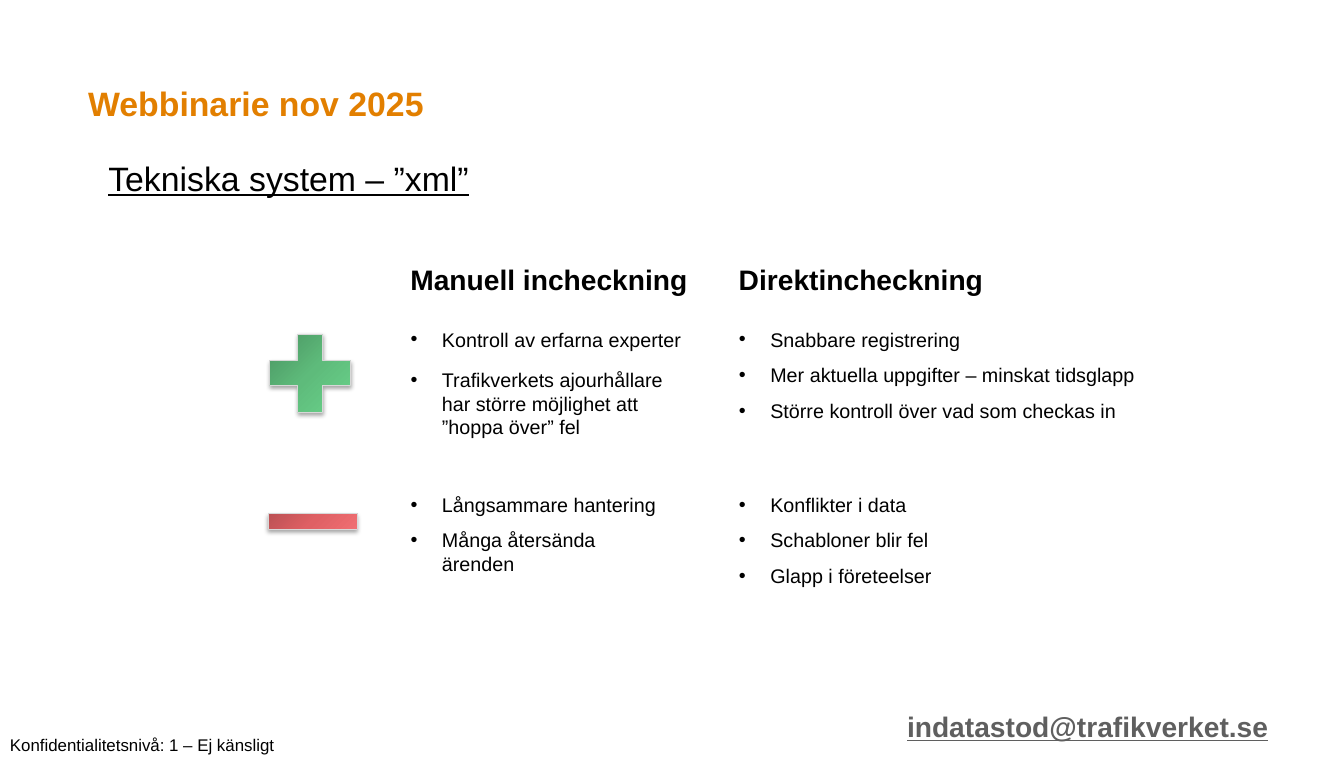
from lxml import etree
from pptx import Presentation
from pptx import util as u
from pptx.dml import color
from pptx.enum import shapes, text
from pptx.oxml import ns

TITLE = "Webbinarie nov 2025"
COLUMNS = ["Manuell incheckning", "Direktincheckning"]
# (row, column, gap between items in points, width, items)
LISTS = [
    (0, 0, 12, 2.97, ["Kontroll av erfarna experter",
                      "Trafikverkets ajourhållare har större möjlighet att ”hoppa över” fel"]),
    (0, 1, 8.5, 4.18, ["Snabbare registrering",
                       "Mer aktuella uppgifter – minskat tidsglapp",
                       "Större kontroll över vad som checkas in"]),
    (1, 0, 8.5, 2.65, ["Långsammare hantering", "Många återsända ärenden"]),
    (1, 1, 8.5, 2.65, ["Konflikter i data", "Schabloner blir fel", "Glapp i företeelser"]),
]
COLORS = {"title": "E27F00", "text": "000000", "email": "5F5F5F", "edge": "D8D8D8"}
GREENS = ["428457", "5EBB7B", "70DE92"]
REDS = ["9D4446", "DF6064", "FF7C80"]
SIGNS = [
    (shapes.MSO_SHAPE.MATH_PLUS, (2.52, 3.16, 1.08, 1.05), GREENS),
    (shapes.MSO_SHAPE.MATH_MINUS, (2.49, 4.82, 1.19, 0.65), REDS),
]
COLUMN_X = [3.95, 7.19]
ROW_Y = [3.18, 4.81]
HEADING_Y = 2.54
LIST_HEIGHT = [1.25, 1.05]
INDENT = 0.31

LABELS = [
    ("Tekniska system – ”xml”", (0.97, 1.51, 4.24, 0.5),
     {"size": 24, "underline": True}),
    ("indatastod@trafikverket.se", (8.85, 6.95, 3.81, 0.44),
     {"size": 20, "bold": True, "underline": True, "color": "email"}),
    ("Konfidentialitetsnivå: 1 – Ej känsligt", (0, 7.2, 4.14, 0.3), {"size": 12}),
] + [(name, (x, HEADING_Y, 2.97, 0.44), {"size": 20, "bold": True})
     for name, x in zip(COLUMNS, COLUMN_X)]


def place(shape, area):
    for name, value in zip(("left", "top", "width", "height"), area):
        setattr(shape, name, u.Inches(value))


def add_bullet(para):
    props = para._p.get_or_add_pPr()
    props.set("marL", str(u.Inches(INDENT)))
    props.set("indent", str(-u.Inches(INDENT)))
    etree.SubElement(props, ns.qn("a:buFont")).set("typeface", "Arial")
    etree.SubElement(props, ns.qn("a:buChar")).set("char", "•")


def write(box, lines, size, gap=0, bullets=False, color_name="text",
          anchor=text.MSO_ANCHOR.TOP, **style):
    frame = box.text_frame
    frame.text = "\n".join(lines)
    frame.word_wrap = True
    frame.auto_size = text.MSO_AUTO_SIZE.NONE
    frame.vertical_anchor = anchor
    font_values = {"name": "Arial", "size": u.Pt(size), "bold": False, **style}
    for number, para in enumerate(frame.paragraphs):
        para.alignment = text.PP_ALIGN.LEFT
        para.space_before = u.Pt(gap if number else 0)
        if bullets:
            add_bullet(para)
        for span in para.runs:
            for name, value in font_values.items():
                setattr(span.font, name, value)
            span.font.color.rgb = color.RGBColor.from_string(COLORS[color_name])


def add_sign(page, kind, area, shades):
    """Add a plus or minus with a diagonal gradient and a soft shadow."""
    sign = page.shapes.add_shape(kind, *map(u.Inches, area))
    sign.line.color.rgb = color.RGBColor.from_string(COLORS["edge"])
    sign.line.width = u.Pt(0.75)
    sign.fill.gradient()
    stops = "".join(f'<a:gs pos="{pos}"><a:srgbClr val="{shade}"/></a:gs>'
                    for pos, shade in zip((0, 50000, 100000), shades))
    gradient = etree.fromstring(
        f'<a:gradFill {ns.nsdecls("a")} rotWithShape="1"><a:gsLst>{stops}</a:gsLst>'
        '<a:lin ang="2700000" scaled="0"/></a:gradFill>')
    shadow = etree.fromstring(
        f'<a:effectLst {ns.nsdecls("a")}><a:outerShdw blurRad="{u.Pt(3.1)}" '
        f'dist="{u.Pt(1.8)}" dir="5400000" rotWithShape="0"><a:srgbClr val="000000">'
        '<a:alpha val="35000"/></a:srgbClr></a:outerShdw></a:effectLst>')
    props = sign._element.spPr
    props.replace(props.find(ns.qn("a:gradFill")), gradient)
    props.append(shadow)


def main():
    deck = Presentation()
    deck.slide_width, deck.slide_height = u.Inches(13.26), u.Inches(7.5)
    page = deck.slides.add_slide(deck.slide_layouts.get_by_name("Comparison"))

    title, *bodies = page.placeholders
    place(title, (0.77, 0.76, 4.62, 0.52))
    write(title, [TITLE], 24, color_name="title", bold=True,
          anchor=text.MSO_ANCHOR.MIDDLE)

    for caption, area, style in LABELS:
        label = page.shapes.add_textbox(*map(u.Inches, area))
        values = dict(style)
        write(label, [caption], color_name=values.pop("color", "text"), **values)

    for sign in SIGNS:
        add_sign(page, *sign)

    for body, (row, column, gap, width, items) in zip(bodies, LISTS):
        place(body, (COLUMN_X[column], ROW_Y[row], width, LIST_HEIGHT[row]))
        write(body, items, 14, gap, bullets=True)

    deck.save("out.pptx")


if __name__ == "__main__":
    main()
